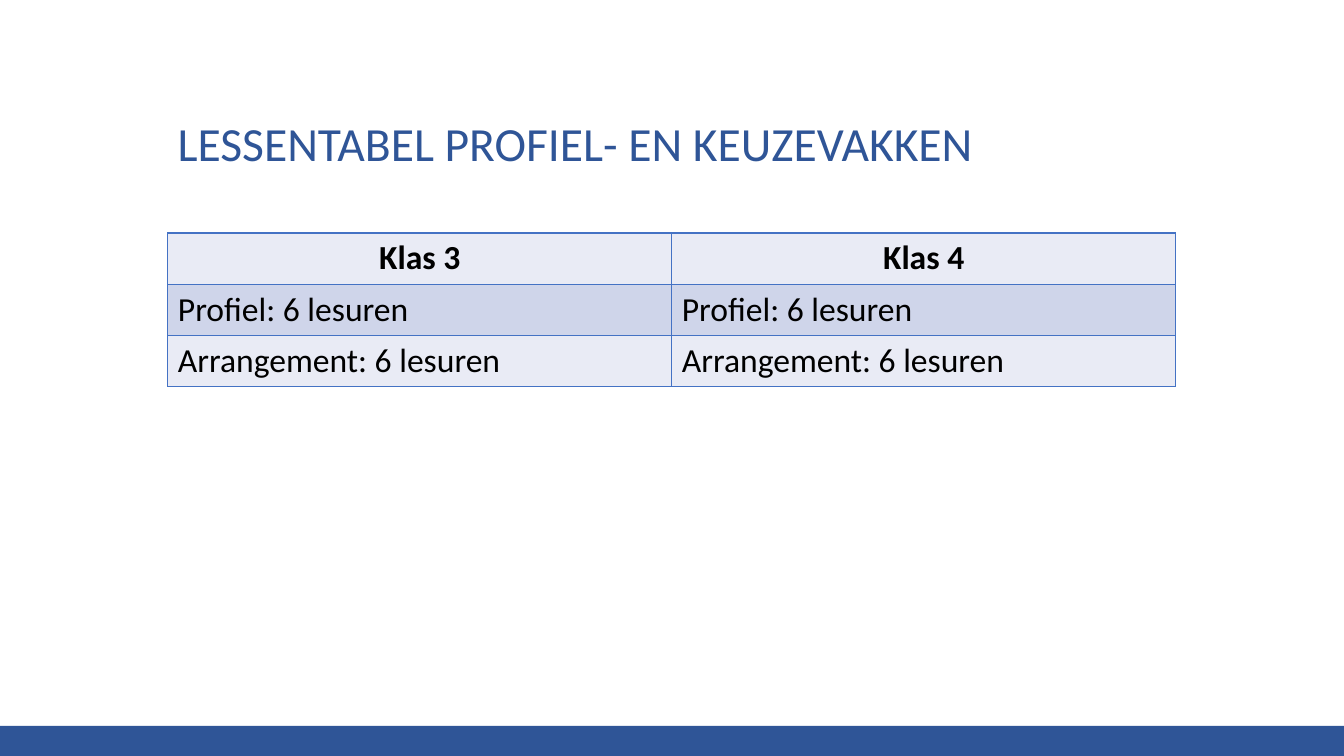
import dataclasses

import lxml.etree
import pptx
import pptx.dml.color
import pptx.enum.shapes
import pptx.enum.text
import pptx.oxml.ns
import pptx.util

Cm = pptx.util.Cm
Pt = pptx.util.Pt
ALIGN = pptx.enum.text.PP_ALIGN

FONT = "Calibri"
COLORS = {
    "navy": "2F5597",
    "line": "4472C4",
    "pale": "E9EBF5",
    "band": "CFD5EA",
    "black": "000000",
}
WIDTH, HEIGHT = 33.87, 19.05
LEFT, SPAN = 4.23, 25.4
FOOTER = 0.76
ROW = 1.29


@dataclasses.dataclass
class Row:
    texts: tuple[str, ...]
    fill: str
    bold: bool = False
    align: ALIGN = ALIGN.LEFT


ROWS = [
    Row(("Klas 3", "Klas 4"), "pale", True, ALIGN.CENTER),
    Row(("Profiel: 6 lesuren",) * 2, "band"),
    Row(("Arrangement: 6 lesuren",) * 2, "pale"),
]


def color(name: str) -> pptx.dml.color.RGBColor:
    return pptx.dml.color.RGBColor.from_string(COLORS[name])


def style(frame, size: float, ink: str, bold: bool = False, align: ALIGN = ALIGN.LEFT) -> None:
    for para in frame.paragraphs:
        para.alignment = align
        for run in para.runs:
            run.font.name = FONT
            run.font.size = Pt(size)
            run.font.bold = bold
            run.font.color.rgb = color(ink)


def border(cell) -> None:
    qn = pptx.oxml.ns.qn
    props = cell._tc.get_or_add_tcPr()
    for side in ("lnL", "lnR", "lnT", "lnB"):
        line = lxml.etree.SubElement(props, qn(f"a:{side}"), w=str(Pt(1)))
        solid = lxml.etree.SubElement(line, qn("a:solidFill"))
        lxml.etree.SubElement(solid, qn("a:srgbClr"), val=COLORS["line"])


def add_footer(slide) -> None:
    bar = slide.shapes.add_shape(
        pptx.enum.shapes.MSO_SHAPE.RECTANGLE,
        0, Cm(HEIGHT - FOOTER), Cm(WIDTH), Cm(FOOTER),
    )
    bar.shadow.inherit = False
    bar.fill.solid()
    bar.fill.fore_color.rgb = color("navy")
    bar.line.fill.background()


def add_title(slide, text: str) -> None:
    box = slide.shapes.add_textbox(Cm(LEFT), Cm(1.27), Cm(SPAN), Cm(3.18))
    frame = box.text_frame
    frame.word_wrap = True
    frame.vertical_anchor = pptx.enum.text.MSO_ANCHOR.BOTTOM
    frame.text = text
    frame.paragraphs[0].line_spacing = 0.9
    style(frame, 34, "navy")


def add_lessons(slide, rows: list[Row]) -> None:
    count = len(rows[0].texts)
    table = slide.shapes.add_table(
        len(rows), count, Cm(LEFT), Cm(5.87), Cm(SPAN), Cm(ROW * len(rows))
    ).table
    table.first_row = False
    table.horz_banding = False
    for i, row in enumerate(rows):
        for j, text in enumerate(row.texts):
            cell = table.cell(i, j)
            border(cell)
            cell.fill.solid()
            cell.fill.fore_color.rgb = color(row.fill)
            cell.text_frame.text = text
            style(cell.text_frame, 24, "black", row.bold, row.align)


def main() -> None:
    deck = pptx.Presentation()
    deck.slide_width = Cm(WIDTH)
    deck.slide_height = Cm(HEIGHT)
    slide = deck.slides.add_slide(deck.slide_layouts[6])
    add_footer(slide)
    add_title(slide, "LESSENTABEL PROFIEL- EN KEUZEVAKKEN")
    add_lessons(slide, ROWS)
    deck.save("out.pptx")


if __name__ == "__main__":
    main()
